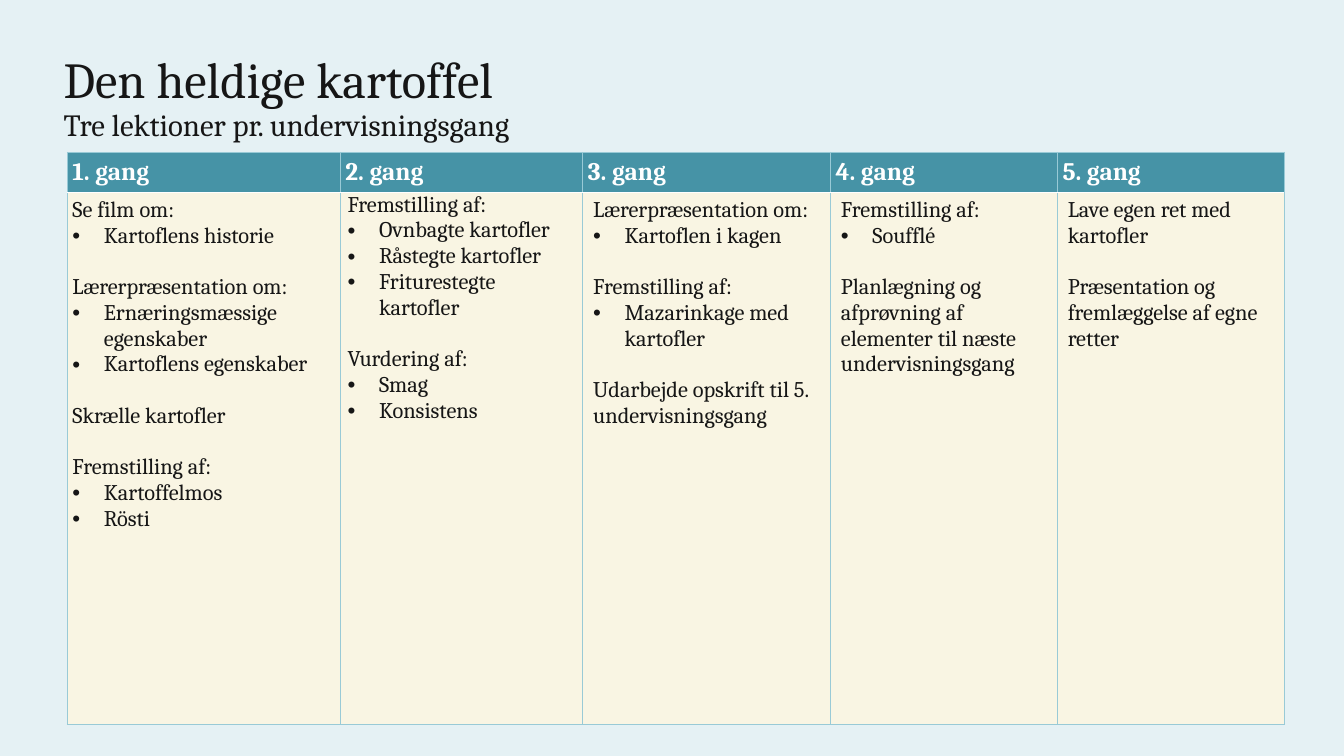
from lxml import etree
from pptx import Presentation
from pptx import util as u
from pptx.dml.color import RGBColor
from pptx.enum import text
from pptx.oxml import ns

PX = 9525  # EMU per px, 96 px to the inch
FONT = "Cambria"
COLORS = {
    "page": "E5F1F4", "header": "4693A6", "body": "F9F5E3",
    "border": "99CAD6", "ink": "161616", "white": "FFFFFF",
}
COLUMN_WIDTHS = [260, 231, 236, 216, 216]
HEADER_HEIGHT, BODY_HEIGHT = 38, 507
BULLET_INDENT = 30
GROUP_GAP = 18.4  # points, one line of body text

# Each session: cell margins (sides, top and bottom) and groups of lead text with bullets
SESSIONS = [
    ((5, 5), [
        ("Se film om:", ["Kartoflens historie"]),
        ("Lærerpræsentation om:", ["Ernæringsmæssige egenskaber", "Kartoflens egenskaber"]),
        ("Skrælle kartofler", []),
        ("Fremstilling af:", ["Kartoffelmos", "Rösti"]),
    ]),
    ((7, 0), [
        ("Fremstilling af:", ["Ovnbagte kartofler", "Råstegte kartofler",
                              "Friturestegte kartofler"]),
        ("Vurdering af:", ["Smag", "Konsistens"]),
    ]),
    ((10, 5), [
        ("Lærerpræsentation om:", ["Kartoflen i kagen"]),
        ("Fremstilling af:", ["Mazarinkage med kartofler"]),
        ("Udarbejde opskrift til 5. undervisningsgang", []),
    ]),
    ((10, 5), [
        ("Fremstilling af:", ["Soufflé"]),
        ("Planlægning og afprøvning af elementer til næste undervisningsgang", []),
    ]),
    ((10, 5), [
        ("Lave egen ret med kartofler", []),
        ("Præsentation og fremlæggelse af egne retter", []),
    ]),
]


def px(length):
    return u.Emu(length * PX)


def rgb(name):
    return RGBColor.from_string(COLORS[name])


def add_paragraph(frame, words, size, color="ink", bold=False, bullet=False):
    """Fill the frame's first paragraph if it is unused, else append one."""
    para = frame.paragraphs[0]
    if para.runs:
        para = frame.add_paragraph()
    para.add_run().text = words
    if bullet:
        props = para._p.get_or_add_pPr()
        props.set("marL", str(px(BULLET_INDENT)))
        props.set("indent", str(-px(BULLET_INDENT)))
        etree.SubElement(props, ns.qn("a:buFont"), typeface="Arial")
        etree.SubElement(props, ns.qn("a:buChar"), char="•")
    para.font.name = FONT
    para.font.size = u.Pt(size)
    para.font.bold = bold
    para.font.color.rgb = rgb(color)
    return para


def add_title(page):
    title = page.shapes.title
    title.left, title.top, title.width, title.height = map(px, (51, 26, 737, 137))
    frame = title.text_frame
    frame.word_wrap = True
    frame.auto_size = text.MSO_AUTO_SIZE.NONE
    frame.vertical_anchor = text.MSO_ANCHOR.MIDDLE
    for words, size in (("Den heldige kartoffel", 36),
                        ("Tre lektioner pr. undervisningsgang", 22)):
        para = add_paragraph(frame, words, size)
        para.alignment = text.PP_ALIGN.LEFT
        para.line_spacing = 0.9


def style_cell(cell, fill, margins, white_side):
    """Set borders (white between header and body), fill and margins."""
    props = cell._tc.get_or_add_tcPr()
    for side in ("lnL", "lnR", "lnT", "lnB"):
        color, width = ("white", 1) if side == white_side else ("border", 0.5)
        line = etree.SubElement(props, ns.qn(f"a:{side}"), w=str(u.Pt(width)))
        solid = etree.SubElement(line, ns.qn("a:solidFill"))
        etree.SubElement(solid, ns.qn("a:srgbClr"), val=COLORS[color])
    cell.fill.solid()
    cell.fill.fore_color.rgb = rgb(fill)
    sides, ends = margins
    cell.margin_left = cell.margin_right = px(sides)
    cell.margin_top = cell.margin_bottom = px(ends)


def fill_session(frame, groups):
    for index, (lead, bullets) in enumerate(groups):
        para = add_paragraph(frame, lead, 16)
        if index:
            para.space_before = u.Pt(GROUP_GAP)
        for words in bullets:
            add_paragraph(frame, words, 16, bullet=True)


def add_plan(page):
    table = page.shapes.add_table(
        2, len(SESSIONS), px(64), px(145),
        px(sum(COLUMN_WIDTHS)), px(HEADER_HEIGHT + BODY_HEIGHT)).table
    table.rows[0].height = px(HEADER_HEIGHT)
    table.rows[1].height = px(BODY_HEIGHT)
    for index, (margins, groups) in enumerate(SESSIONS):
        table.columns[index].width = px(COLUMN_WIDTHS[index])
        header, body = table.cell(0, index), table.cell(1, index)
        style_cell(header, "header", (5, 5), "lnB")
        add_paragraph(header.text_frame, f"{index + 1}. gang", 18, "white", bold=True)
        style_cell(body, "body", margins, "lnT")
        fill_session(body.text_frame, groups)


def main():
    deck = Presentation()
    deck.slide_width, deck.slide_height = px(1280), px(720)
    page = deck.slides.add_slide(deck.slide_layouts[5])
    page.background.fill.solid()
    page.background.fill.fore_color.rgb = rgb("page")
    # Lesson plan, then the title above it
    add_plan(page)
    add_title(page)
    deck.save("out.pptx")


if __name__ == "__main__":
    main()
